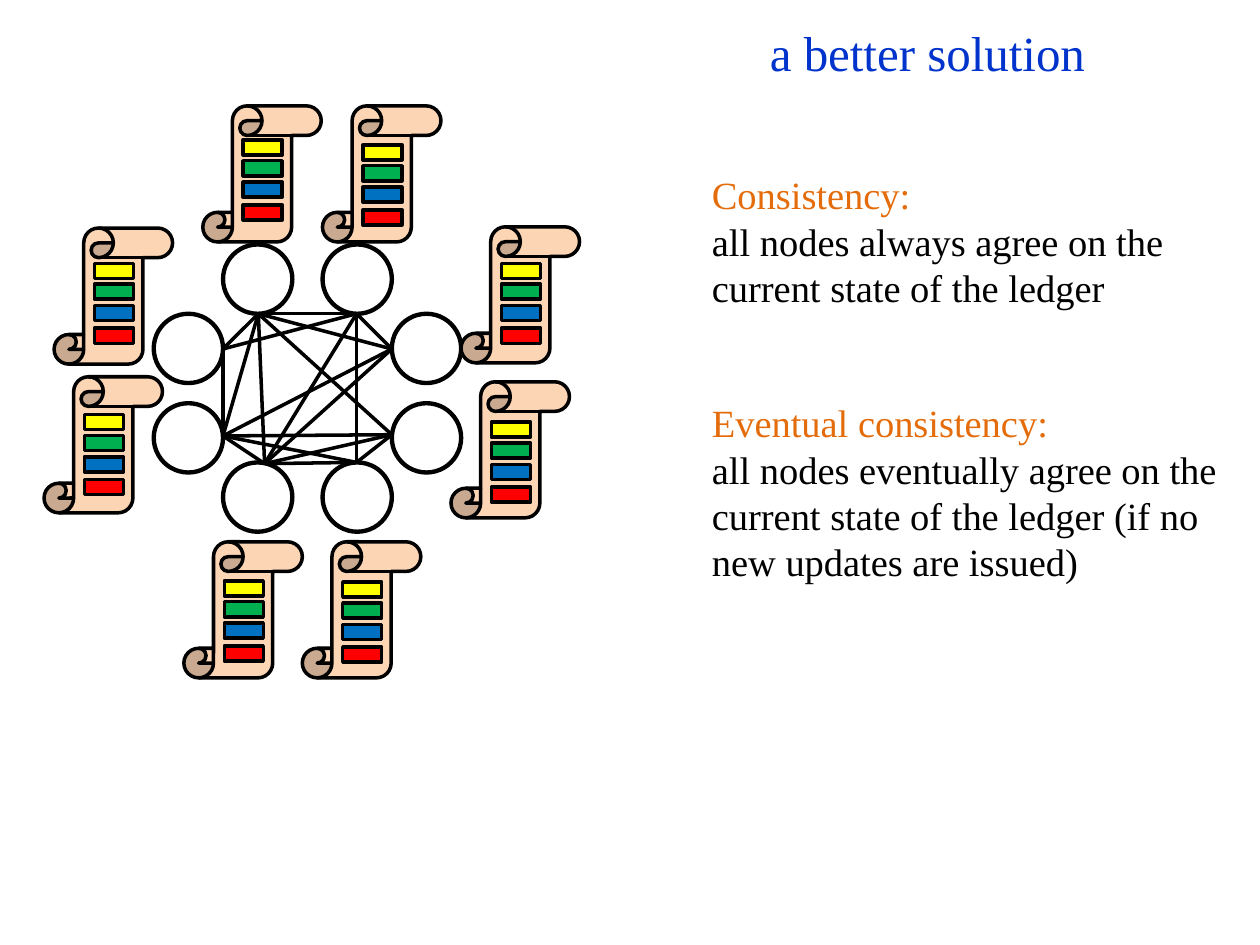
from dataclasses import dataclass

from lxml import etree
from pptx import Presentation
from pptx.dml.color import RGBColor
from pptx.enum.shapes import MSO_CONNECTOR, MSO_SHAPE
from pptx.enum.text import MSO_ANCHOR, MSO_AUTO_SIZE, PP_ALIGN
from pptx.oxml.ns import qn
from pptx.util import Inches, Pt

ELLIPSE = MSO_SHAPE.OVAL
RECT = MSO_SHAPE.RECTANGLE
SCROLL = MSO_SHAPE.VERTICAL_SCROLL
STRAIGHT = MSO_CONNECTOR.STRAIGHT
LEFT = PP_ALIGN.LEFT
TOP = MSO_ANCHOR.TOP
NO_FIT = MSO_AUTO_SIZE.NONE

COLS = 100
TWO_CONTENT = 3


@dataclass(frozen=True)
class Theme:
    font: str = "Times New Roman"
    title_size: float = 28
    body_size: float = 22
    node_line: float = 2.5
    line: float = 2
    title: str = "0033CC"
    heading: str = "E46C0A"
    ink: str = "000000"
    paper: str = "FFFFFF"
    scroll: str = "FCD5B5"
    blocks: tuple = ("FFFF00", "00B050", "0070C0", "FF0000")


class Deck:
    def __init__(self, theme):
        self.theme = theme
        self.prs = Presentation()
        self.prs.slide_width = Inches(10)
        self.prs.slide_height = Inches(7.5)
        self.cell = self.prs.slide_width // COLS
        self.slide = self.prs.slides.add_slide(self.prs.slide_layouts[TWO_CONTENT])

    def grid(self, *values):
        return [round(v * self.cell) for v in values]

    def text(self, idx, box, lines, size, colors, wrap=True):
        sp = self.slide.placeholders[idx]
        sp.left, sp.top, sp.width, sp.height = self.grid(*box)
        tf = sp.text_frame
        tf.text = "\n".join(lines)
        tf.word_wrap = wrap
        tf.auto_size = NO_FIT
        tf.vertical_anchor = TOP
        for p, color in zip(tf.paragraphs, colors):
            p.alignment = LEFT
            p.space_before = Pt(0)
            pPr = p._p.get_or_add_pPr()
            pPr.set("marL", "0")
            pPr.set("indent", "0")
            etree.SubElement(pPr, qn("a:buNone"))
            for r in p.runs:
                r.font.name = self.theme.font
                r.font.size = Pt(size)
                r.font.color.rgb = RGBColor.from_string(color)

    def title(self, box, text):
        self.text(0, box, [text], self.theme.title_size, [self.theme.title], wrap=False)

    def definition(self, idx, box, term, meaning):
        colors = [self.theme.heading, self.theme.ink]
        self.text(idx, box, [term, meaning], self.theme.body_size, colors)

    def shape(self, kind, box, fill, width):
        sp = self.slide.shapes.add_shape(kind, *self.grid(*box))
        sp.shadow.inherit = False
        sp.fill.solid()
        sp.fill.fore_color.rgb = RGBColor.from_string(fill)
        sp.line.color.rgb = RGBColor.from_string(self.theme.ink)
        sp.line.width = Pt(width)
        return sp

    def node(self, x, y):
        self.shape(ELLIPSE, (x, y, 5.5, 5.5), self.theme.paper, self.theme.node_line)

    def network(self, points, links):
        group = self.slide.shapes.add_group_shape()
        for a, b in links:
            line = group.shapes.add_connector(STRAIGHT, *self.grid(*points[a], *points[b]))
            line.line.color.rgb = RGBColor.from_string(self.theme.ink)
            line.line.width = Pt(self.theme.line)
            etree.SubElement(line._element.spPr, qn("a:effectLst"))

    def ledger(self, x, y, block_y):
        sp = self.shape(SCROLL, (x, y, 9.4, 10.8), self.theme.scroll, self.theme.line)
        sp.adjustments[0] = 0.25
        for color, dy in zip(self.theme.blocks, (0, 1.65, 3.35, 5.15)):
            self.shape(RECT, (x + 3.2, block_y + dy, 3.1, 1.2), color, self.theme.line)


NODES = [
    (25.6, 19.4), (17.7, 36.7), (25.6, 36.7), (31.1, 24.9),
    (31.1, 32), (12.2, 24.9), (12.2, 32), (17.7, 19.4),
]

POINTS = {
    "top left": (20.5, 24.9), "top right": (28.3, 24.9),
    "right upper": (31.1, 27.7), "right lower": (31.1, 34.5),
    "bottom right": (28.3, 36.7), "bottom left": (21, 36.8),
    "left lower": (17.7, 34.6), "left upper": (17.7, 27.7),
}

NEIGHBOURS = {
    "top left": ["right upper", "right lower", "bottom left", "top right",
                 "left upper", "left lower"],
    "bottom left": ["bottom right", "right lower", "right upper", "top right",
                    "left lower"],
    "top right": ["right upper", "bottom right", "left upper"],
    "left lower": ["left upper", "right upper", "right lower", "bottom right"],
    "bottom right": ["right lower"],
}

LEDGERS = [
    (4.3, 18.1, 20.9), (16.1, 8.4, 11.1), (25.6, 8.4, 11.5), (36.6, 18, 20.9),
    (3.5, 29.9, 32.9), (35.8, 30.3, 33.5), (14.6, 43, 46.1), (24, 43, 46.2),
]


def main():
    deck = Deck(Theme())
    deck.title((60.1, 1.3, 27.3, 5.7), "a better solution")
    deck.definition(1, (55.5, 13.1, 42.5, 12.1), "Consistency:",
                    "all nodes always agree on the current state of the ledger")
    deck.definition(2, (55.5, 31.2, 42.5, 15.8), "Eventual consistency:",
                    "all nodes eventually agree on the current state of the ledger "
                    "(if no new updates are issued)")
    for node in NODES:
        deck.node(*node)
    deck.network(POINTS, [(a, b) for a, ends in NEIGHBOURS.items() for b in ends])
    for ledger in LEDGERS:
        deck.ledger(*ledger)
    deck.prs.save("out.pptx")


if __name__ == "__main__":
    main()
